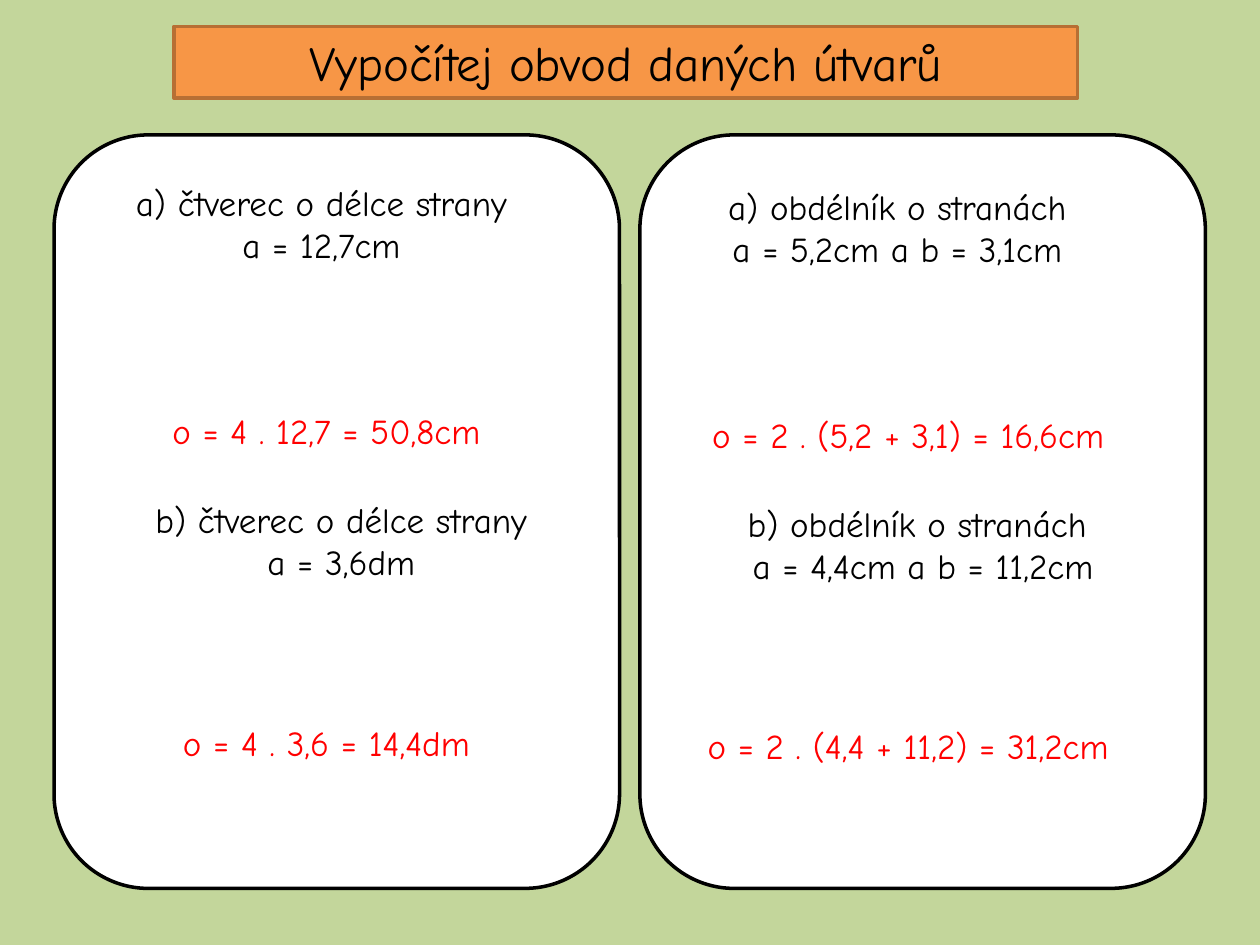
"""Build a worksheet slide on the perimeters of squares and rectangles."""
from dataclasses import dataclass

from pptx import Presentation
from pptx import util as u
from pptx.dml.color import RGBColor
from pptx.enum import shapes, text


@dataclass(frozen=True)
class Theme:
    """Colours, font and type sizes of the worksheet."""
    font: str = "Comic Neue"
    background: str = "C3D69B"
    banner: str = "F79646"
    banner_edge: str = "B76F34"
    panel: str = "FFFFFF"
    ink: str = "000000"
    answer: str = "FF0000"
    title_size: int = 28
    body_size: int = 20
    edge_width: int = 2


THEME = Theme()

COLUMNS = (
    (1.09, 1.7, 3.53, (
        ("a) čtverec o délce strany ", "a = 12,7cm ", "o = 4 . 12,7 = 50,8cm "),
        ("b) čtverec o délce strany ", "a = 3,6dm ", "o = 4 . 3,6 = 14,4dm "),
    )),
    (12.9, 13.31, 3.61, (
        ("a) obdélník o stranách ", "a = 5,2cm a b = 3,1cm ",
         "o = 2 . (5,2 + 3,1) = 16,6cm"),
        ("b) obdélník o stranách ", "a = 4,4cm a b = 11,2cm",
         "o = 2 . (4,4 + 11,2) = 31,2cm"),
    )),
)
TASK_OFFSETS = ((0, 0, 4.6), (0.4, 6.4, 10.88))


def box(left, top, width, height):
    """Turn centimetres into a placement."""
    return u.Cm(left), u.Cm(top), u.Cm(width), u.Cm(height)


def paint(target, fill, edge):
    """Give a shape a solid fill and an outline."""
    target.fill.solid()
    target.fill.fore_color.rgb = RGBColor.from_string(fill)
    target.line.color.rgb = RGBColor.from_string(edge)
    target.line.width = u.Pt(THEME.edge_width)


def write(frame, lines, size, color):
    """Fill a text frame with centred lines."""
    frame.word_wrap = True
    frame.text = "\n".join(lines)
    for line in frame.paragraphs:
        line.alignment = text.PP_ALIGN.CENTER
        line.font.name = THEME.font
        line.font.size = u.Pt(size)
        line.font.color.rgb = RGBColor.from_string(color)


def add_title(slide, wording):
    """Place the title as a coloured banner."""
    title = slide.shapes.title
    title.left, title.top, title.width, title.height = box(3.51, 0.53, 18.21, 1.45)
    paint(title, THEME.banner, THEME.banner_edge)
    write(title.text_frame, [wording], THEME.title_size, THEME.ink)
    title.text_frame.auto_size = text.MSO_AUTO_SIZE.NONE


def add_panel(slide, left):
    """Draw the rounded panel behind a column."""
    panel = slide.shapes.add_shape(
        shapes.MSO_SHAPE.ROUNDED_RECTANGLE, *box(left, 2.72, 11.4, 15.19))
    panel.shadow.inherit = False
    paint(panel, THEME.panel, THEME.ink)


def add_lines(slide, place, lines, color):
    """Add a text box with body lines."""
    label = slide.shapes.add_textbox(*place)
    write(label.text_frame, lines, THEME.body_size, color)


def add_column(slide, panel_left, left, top, tasks):
    """Add a panel with its tasks and answers."""
    add_panel(slide, panel_left)
    for (shift, task_drop, answer_drop), (figure, sides, answer) in zip(
            TASK_OFFSETS, tasks):
        add_lines(slide, box(left + shift, top + task_drop, 9.8, 1.96),
                  [figure, sides], THEME.ink)
        add_lines(slide, box(left, top + answer_drop, 10, 1.12),
                  [answer], THEME.answer)


def main():
    """Build and save the worksheet."""
    deck = Presentation()
    deck.slide_width, deck.slide_height = u.Cm(25.4), u.Cm(19.05)
    slide = deck.slides.add_slide(deck.slide_layouts.get_by_name("Title Only"))
    slide.background.fill.solid()
    slide.background.fill.fore_color.rgb = RGBColor.from_string(THEME.background)
    add_title(slide, "Vypočítej obvod daných útvarů")
    for column in COLUMNS:
        add_column(slide, *column)
    deck.save("out.pptx")


if __name__ == "__main__":
    main()
